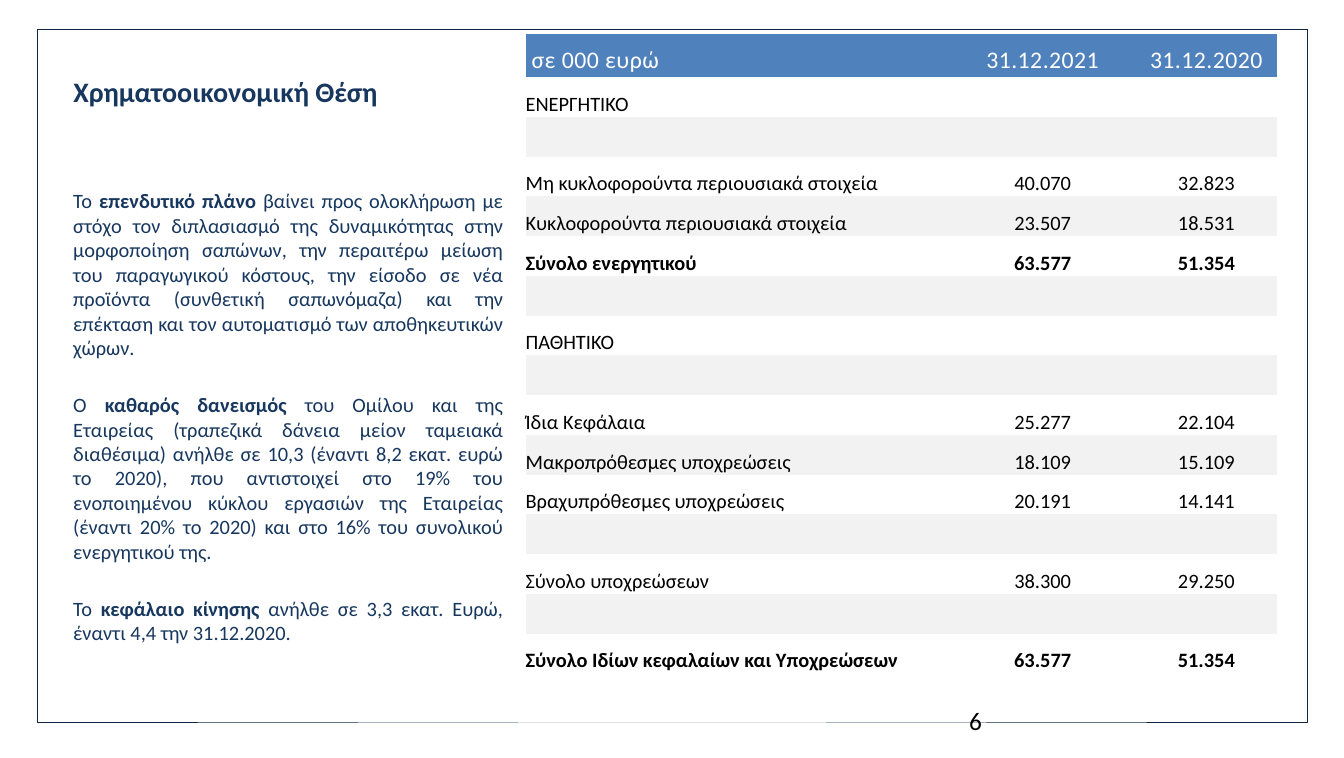
from dataclasses import dataclass

from pptx import Presentation
from pptx.dml.color import RGBColor
from pptx.enum.shapes import MSO_SHAPE
from pptx.enum.text import MSO_ANCHOR, MSO_AUTO_SIZE, PP_ALIGN
from pptx.util import Pt

RECT = MSO_SHAPE.RECTANGLE
TOP, MIDDLE, BOTTOM = MSO_ANCHOR.TOP, MSO_ANCHOR.MIDDLE, MSO_ANCHOR.BOTTOM
LEFT, CENTER, JUSTIFY = PP_ALIGN.LEFT, PP_ALIGN.CENTER, PP_ALIGN.JUSTIFY
FIXED = MSO_AUTO_SIZE.NONE
PLAIN_GRID = "{2D5ABB26-0587-4C30-8999-92F81FD0307C}"


@dataclass(frozen=True)
class Theme:
    font: str = "Calibri"
    navy: str = "17375E"
    edge: str = "0F243E"
    blue: str = "4F81BD"
    band: str = "F2F2F2"
    white: str = "FFFFFF"
    black: str = "000000"
    title: float = 33.1
    head: float = 28
    body: float = 24
    page: float = 29.8


THEME = Theme()

TITLE = "Χρηματοοικονομική Θέση"
# Bold words stand between asterisks.
NOTES = [
    "Το *επενδυτικό πλάνο* βαίνει προς ολοκλήρωση με στόχο τον διπλασιασμό "
    "της δυναμικότητας στην μορφοποίηση σαπώνων, την περαιτέρω μείωση του "
    "παραγωγικού κόστους, την είσοδο σε νέα προϊόντα (συνθετική σαπωνόμαζα) "
    "και την επέκταση και τον αυτοματισμό των αποθηκευτικών χώρων.",
    "Ο *καθαρός δανεισμός* του Ομίλου και της Εταιρείας (τραπεζικά δάνεια "
    "μείον ταμειακά διαθέσιμα) ανήλθε σε 10,3 (έναντι 8,2 εκατ. ευρώ το 2020), "
    "που αντιστοιχεί στο 19% του ενοποιημένου κύκλου εργασιών της Εταιρείας "
    "(έναντι 20% το 2020) και στο 16% του συνολικού ενεργητικού της.",
    "Το *κεφάλαιο κίνησης* ανήλθε σε 3,3 εκατ. Ευρώ, έναντι 4,4 την 31.12.2020.",
]
HEAD = ("σε 000 ευρώ", "31.12.2021", "31.12.2020")
ROWS = [
    ("ΕΝΕΡΓΗΤΙΚΟ",),
    (),
    ("Μη κυκλοφορούντα περιουσιακά στοιχεία", "40.070", "32.823"),
    ("Κυκλοφορούντα περιουσιακά στοιχεία", "23.507", "18.531"),
    ("*Σύνολο ενεργητικού*", "*63.577*", "*51.354*"),
    (),
    ("ΠΑΘΗΤΙΚΟ",),
    (),
    ("Ίδια Κεφάλαια", "25.277", "22.104"),
    ("Μακροπρόθεσμες υποχρεώσεις", "18.109", "15.109"),
    ("Βραχυπρόθεσμες υποχρεώσεις", "20.191", "14.141"),
    (),
    ("Σύνολο υποχρεώσεων", "38.300", "29.250"),
    (),
    ("*Σύνολο Ιδίων κεφαλαίων και Υποχρεώσεων*", "*63.577*", "*51.354*"),
]
WIDTHS = (525.6, 167, 25.9, 167)
SLOTS = (0, 1, 3)  # the third column is a narrow gap


def write(frame, *texts, size, color, align=LEFT, gap=0, pitch=None, track=0):
    """Fill a text frame, one paragraph a text, with *bold* parts."""
    for index, text in enumerate(texts):
        para = frame.paragraphs[0] if index == 0 else frame.add_paragraph()
        para.alignment = align
        para.space_before = Pt(gap if index else 0)
        para.space_after = Pt(0)
        if pitch:
            para.line_spacing = Pt(pitch)
        for turn, part in enumerate(text.split("*")):
            if not part:
                continue
            run = para.add_run()
            run.text = part
            font = run.font
            font.name, font.size, font.bold = THEME.font, Pt(size), turn % 2 == 1
            font.color.rgb = RGBColor.from_string(color)
            if track:
                run.font._element.set("spc", str(round(track * 100)))


class Page:
    def __init__(self, deck, theme):
        self.theme = theme
        self.slide = deck.slides.add_slide(deck.slide_layouts[5])
        self.shapes = self.slide.shapes

    def title(self, text, left, top, width, height):
        box = self.shapes.title
        box.left, box.top, box.width, box.height = map(Pt, (left, top, width, height))
        frame = box.text_frame
        frame.auto_size, frame.word_wrap = FIXED, True
        frame.vertical_anchor = BOTTOM
        write(frame, f"*{text}*", size=self.theme.title, color=self.theme.navy)

    def border(self, left, top, width, height):
        box = self.shapes.add_shape(RECT, *map(Pt, (left, top, width, height)))
        box.shadow.inherit = False
        box.fill.background()
        box.line.color.rgb = RGBColor.from_string(self.theme.edge)
        box.line.width = Pt(0.25)

    def text(self, texts, left, top, width, height, inset=3.6, **style):
        box = self.shapes.add_textbox(*map(Pt, (left, top, width, height)))
        frame = box.text_frame
        frame.word_wrap, frame.vertical_anchor = True, TOP
        frame.margin_top = Pt(inset)
        write(frame, *texts, **style)

    def table(self, head, rows, left, top, first=51.2, step=46.85):
        count = len(rows) + 1
        size = (sum(WIDTHS), first + step * len(rows))
        holder = self.shapes.add_table(count, len(WIDTHS), *map(Pt, (left, top, *size)))
        grid = holder.table
        grid.horz_banding = False
        grid._tbl.tblPr[0].text = PLAIN_GRID
        for column, width in zip(grid.columns, WIDTHS):
            column.width = Pt(width)
        for index, values in enumerate([head, *rows]):
            grid.rows[index].height = Pt(step if index else first)
            texts = dict(zip(SLOTS, values))
            for col in range(len(WIDTHS)):
                self.cell(grid.cell(index, col), texts.get(col, ""), index, col)

    def cell(self, cell, text, row, col):
        theme, head = self.theme, row == 0
        cell.margin_left = Pt(7 if head and col == 0 else 0)
        cell.margin_right = cell.margin_bottom = Pt(0)
        cell.margin_top = Pt(12.24)
        cell.vertical_anchor = MIDDLE if head else BOTTOM
        if head or row % 2 == 0:
            cell.fill.solid()
            cell.fill.fore_color.rgb = RGBColor.from_string(
                theme.blue if head else theme.band)
        else:
            cell.fill.background()
        write(cell.text_frame, text, align=CENTER if col else LEFT,
              size=theme.head if head else theme.body,
              color=theme.white if head else theme.black,
              track=0.6 if head else 0)


def main():
    deck = Presentation()
    deck.slide_width, deck.slide_height = Pt(1583.28), Pt(892.8)
    page = Page(deck, THEME)
    page.border(43.2, 33.84, 1496.16, 816.48)
    page.title(TITLE, 79.2, 35.3, 520.6, 95.8)
    page.text(NOTES, 79.2, 152.6, 520.6, 644.4, inset=69.4, size=THEME.body,
              color=THEME.navy, align=JUSTIFY, gap=38.4, pitch=28.8)
    page.text(["6"], 1134.7, 827.3, 369.4, 47.5, size=THEME.page, color=THEME.black)
    page.table(HEAD, ROWS, 619.2, 39.6)
    deck.save("out.pptx")


if __name__ == "__main__":
    main()
